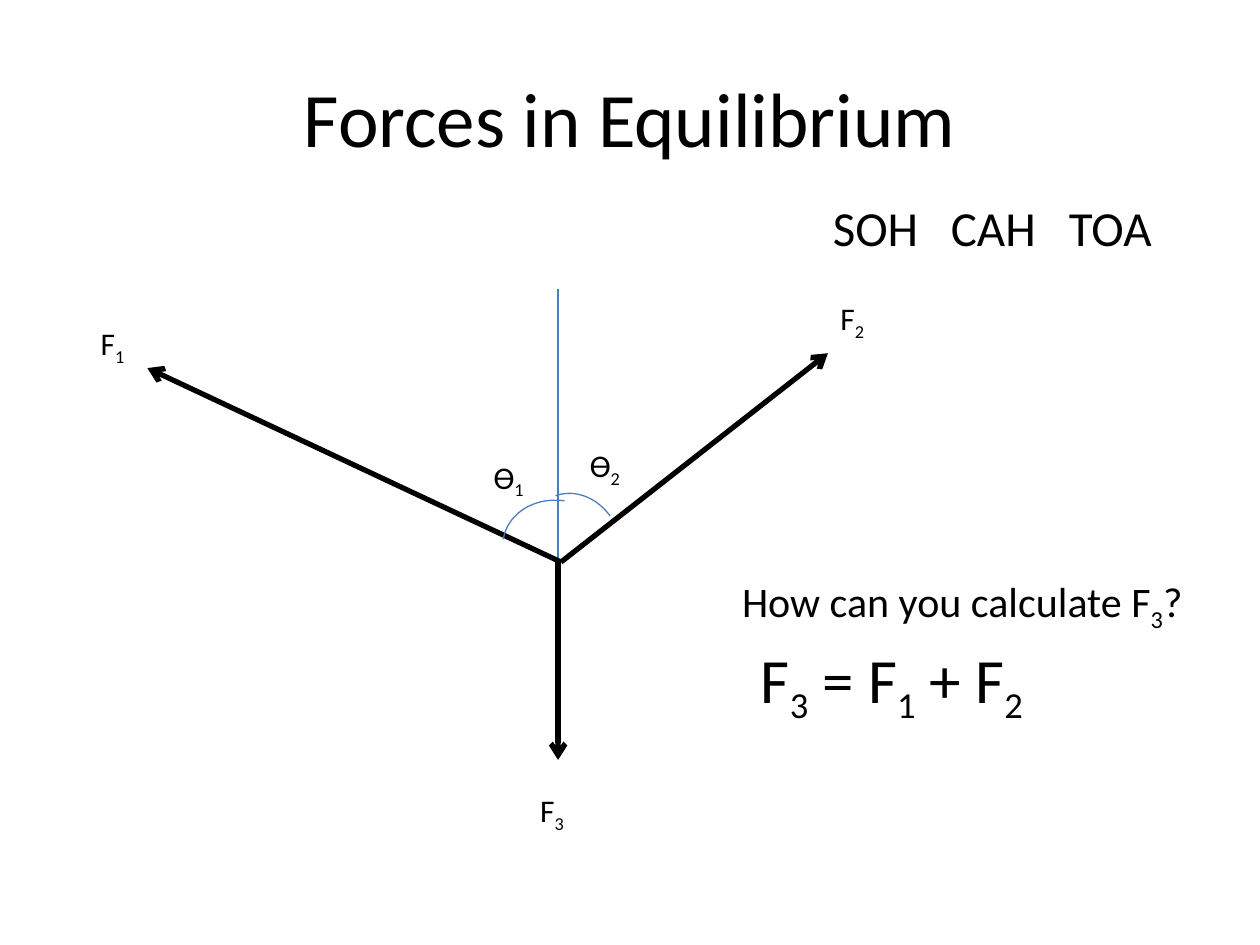
from lxml import etree
from pptx import Presentation
from pptx.dml.color import RGBColor
from pptx.enum.shapes import MSO_CONNECTOR, MSO_SHAPE
from pptx.enum.text import MSO_ANCHOR, MSO_AUTO_SIZE, PP_ALIGN
from pptx.oxml.ns import qn
from pptx.util import Cm, Pt

STRAIGHT, ARC = MSO_CONNECTOR.STRAIGHT, MSO_SHAPE.ARC
MIDDLE, CENTER = MSO_ANCHOR.MIDDLE, PP_ALIGN.CENTER
FIT_SHAPE = MSO_AUTO_SIZE.SHAPE_TO_FIT_TEXT
TITLE_ONLY = 5
FONT = "Calibri"
COLORS = {"ink": "000000", "guide": "4B7EBC"}


def rgb(name):
    return RGBColor.from_string(COLORS[name])


def style_font(font, size):
    for attribute, value in {"name": FONT, "size": Pt(size)}.items():
        setattr(font, attribute, value)
    font.color.rgb = rgb("ink")


def style_line(line, color, width):
    line.color.rgb = rgb(color)
    line.width = Pt(width)


def add_text(slide, box, text, size, wrap=False):
    """Add a text box; the character after each underscore is a subscript."""
    frame = slide.shapes.add_textbox(*map(Cm, box)).text_frame
    for attribute, value in {"word_wrap": wrap, "auto_size": FIT_SHAPE}.items():
        setattr(frame, attribute, value)
    paragraph = frame.paragraphs[0]
    start, *rest = text.split("_")
    pieces = [(start, False)]
    for part in rest:
        pieces += [(part[0], True), (part[1:], False)]
    for piece, lowered in pieces:
        if piece:
            run = paragraph.add_run()
            run.text = piece
            style_font(run.font, size)
            if lowered:
                run.font._element.set("baseline", "-25000")
    return paragraph


def add_line(slide, start, end, color, width, arrow=False):
    line = slide.shapes.add_connector(STRAIGHT, *map(Cm, (*start, *end)))
    style_line(line.line, color, width)
    if arrow:
        etree.SubElement(line.line._get_or_add_ln(), qn("a:tailEnd"), type="arrow")
    etree.SubElement(line._element.spPr, qn("a:effectLst"))


def add_title(slide, box, text):
    title = slide.shapes.title
    title.left, title.top, title.width, title.height = map(Cm, box)
    frame = title.text_frame
    frame.text = text
    frame.vertical_anchor = MIDDLE
    frame.paragraphs[0].alignment = CENTER
    style_font(frame.paragraphs[0].runs[0].font, 44)


def add_mnemonic(slide, box, words):
    """Set the words at equal tab stops."""
    paragraph = add_text(slide, box, "\t".join(words), 28, wrap=True)
    tabs = etree.SubElement(paragraph._p.get_or_add_pPr(), qn("a:tabLst"))
    for index in range(1, len(words)):
        etree.SubElement(tabs, qn("a:tab"), pos=str(Cm(2.38 * index)), algn="l")


def add_force_diagram(slide, left, top):
    def at(x, y):
        return left + x, top + y

    axis_x, junction_y, slant_x = 9.47, 5.51, 9.53
    add_line(slide, at(axis_x, junction_y), at(axis_x, 0), "guide", 0.75)

    forces = [
        ("F_1", slant_x, (1.19, 1.6), (0, 0.58)),
        ("F_2", slant_x, (14.91, 1.3), (14.91, 0.08)),
        ("F_3", axis_x, (axis_x, 9.5), (8.86, 10.01)),
    ]
    for name, start_x, tip, label in forces:
        add_line(slide, at(start_x, junction_y), at(*tip), "ink", 3, arrow=True)
        add_text(slide, (*at(*label), 1.02, 1.02), name, 18)

    angles = [
        ("Ѳ_1", 8.51, 278.5, (162, 0), (7.92, 3.28)),
        ("Ѳ_2", 8.84, 340.5, (162, 203.06), (9.86, 3.05)),
    ]
    for name, arc_x, rotation, sweep, label in angles:
        arc = slide.shapes.add_shape(ARC, *map(Cm, (*at(arc_x, 4.11), 1.9, 2.21)))
        arc.rotation = rotation
        arc.adjustments[0], arc.adjustments[1] = sweep
        arc.shadow.inherit = False
        arc.fill.background()
        style_line(arc.line, "guide", 0.75)
        add_text(slide, (*at(*label), 1.14, 1.02), name, 18)


def add_question(slide, left, top):
    add_text(slide, (left, top, 9.5, 1.27), "How can you calculate F_3?", 24)
    add_text(slide, (left + 0.38, top + 1.3, 6, 1.8), "F_3 = F_1 + F_2", 36)


def main():
    deck = Presentation()
    deck.slide_width, deck.slide_height = Cm(25.4), Cm(19.05)
    slide = deck.slides.add_slide(deck.slide_layouts[TITLE_ONLY])
    add_title(slide, (1.27, 0.76, 22.86, 3.18), "Forces in Equilibrium")
    add_mnemonic(slide, (16.54, 3.86, 7.04, 1.45), ["SOH", "CAH", "TOA"])
    add_force_diagram(slide, 1.78, 5.82)
    add_question(slide, 14.71, 11.48)
    deck.save("out.pptx")


if __name__ == "__main__":
    main()
